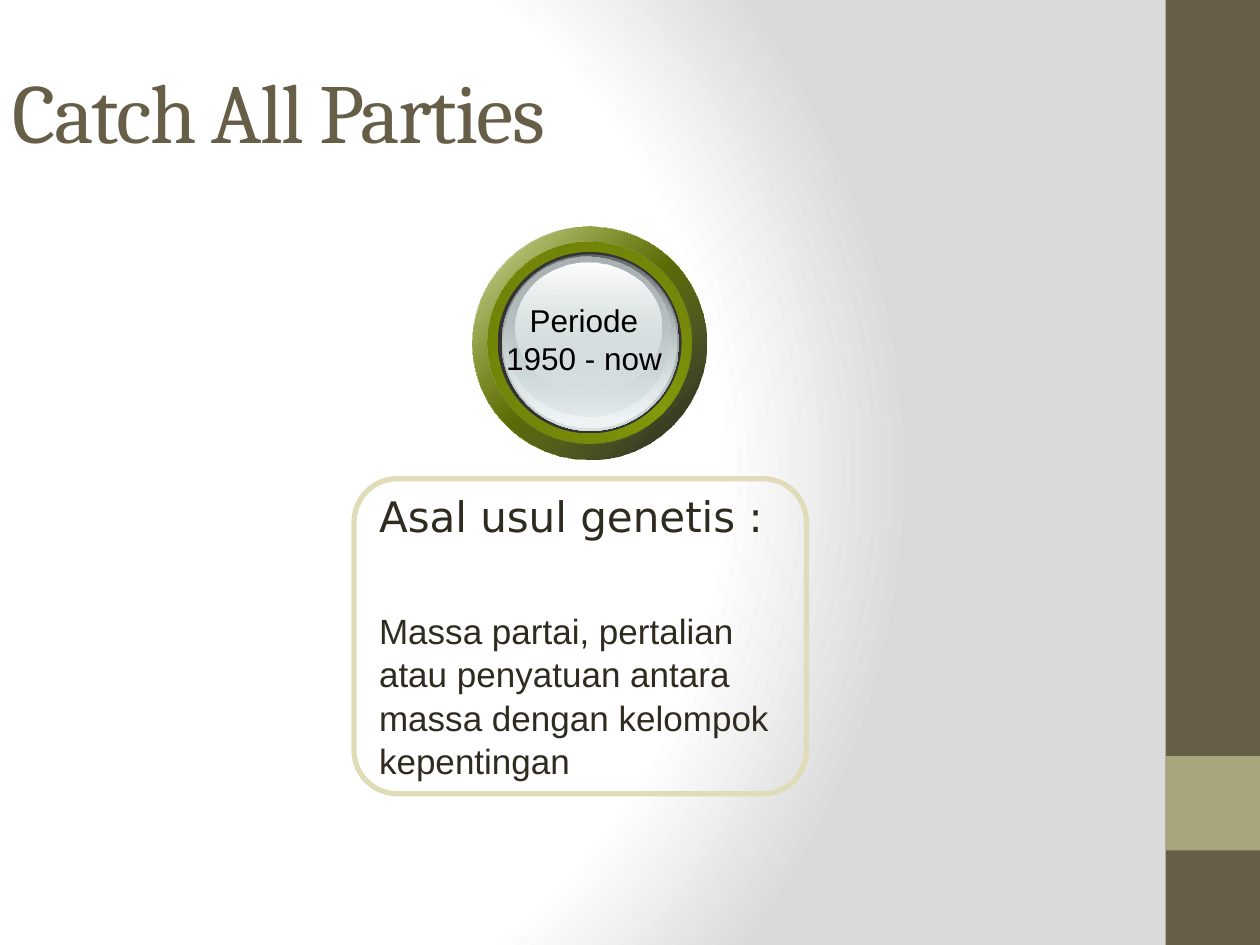
from lxml import etree
from pptx import Presentation
from pptx import util as u
from pptx.dml.color import RGBColor
from pptx.enum import shapes, text
from pptx.oxml.ns import qn

RINGS = [
    ((270, 129.6, 133.9, 133.2), 45, [(0, "FFFFFF"), (50, "849A0A"), (100, "FFFFFF")]),
    ((270, 129.6, 133.9, 133.2), 45, [(0, "849A0A", 32), (100, "000000", 90)]),
    ((278.6, 138.2, 116.6, 115.2), 315, [(0, "657608"), (50, "849A0A"), (100, "657608")]),
    ((278.6, 138.2, 116.6, 115.2), 45, [(0, "6C7E08"), (100, "849A0A", 0)]),
    ((284.4, 144, 105.1, 103.7), 0, [(0, "333333"), (100, "333333")]),
    ((286.6, 145.4, 101.5, 100.8), 90, [(0, "636869"), (100, "D6E1E2")]),
    ((287.3, 146.2, 99.4, 97.9), 90, [(0, "D6E1E2", 0), (100, "F1F5F5")]),
    ((288.7, 146.9, 94.3, 91.4), 90, [(0, "AAB2B3"), (100, "D6E1E2", 48)]),
    ((294.5, 149.8, 83.5, 74.2), 90, [(0, "FFFFFF"), (100, "D6E1E2", 38)]),
]


def color(value):
    """Turn a hex string into a colour."""
    return RGBColor.from_string(value)


def add_child(parent, tag, **attrs):
    """Append a DrawingML element with the given attributes."""
    return etree.SubElement(parent, qn(tag), {k: str(v) for k, v in attrs.items()})


def set_gradient(fill, parent, stops, angle=None, focus=None):
    """Fill with stops (position, colour, opacity), linear or circular."""
    fill.gradient()
    grad = parent.find(".//" + qn("a:gradFill"))
    for child in list(grad):
        grad.remove(child)
    stop_list = add_child(grad, "a:gsLst")
    for pos, value, *opacity in stops:
        stop = add_child(stop_list, "a:gs", pos=pos * 1000)
        clr = add_child(stop, "a:srgbClr", val=value)
        if opacity:
            add_child(clr, "a:alpha", val=opacity[0] * 1000)
    if focus:
        circle = add_child(grad, "a:path", path="circle")
        add_child(circle, "a:fillToRect", **{k: v * 1000 for k, v in zip("ltrb", focus)})
    else:
        add_child(grad, "a:lin", ang=angle * 60000, scaled=0)


def add_shape(s, kind, box, fill=None, line=None, width=0):
    """Add a preset shape without shadow."""
    sp = s.shapes.add_shape(kind, *(u.Pt(v) for v in box))
    sp.shadow.inherit = False
    if fill:
        sp.fill.solid()
        sp.fill.fore_color.rgb = color(fill)
    else:
        sp.fill.background()
    if line:
        sp.line.color.rgb = color(line)
        sp.line.width = u.Pt(width)
    else:
        sp.line.fill.background()
    return sp


def add_ring(s, box, angle, stops):
    """Add one gradient disc of the round badge."""
    sp = add_shape(s, shapes.MSO_SHAPE.OVAL, box)
    set_gradient(sp.fill, sp._element.spPr, stops, angle)


def write_text(tf, lines, anchor, wrap=True):
    """Write paragraphs given as text, font format and paragraph format."""
    tf.word_wrap = wrap
    tf.vertical_anchor = anchor
    for i, (words, font, para) in enumerate(lines):
        p = tf.paragraphs[0] if i == 0 else tf.add_paragraph()
        for name, value in para.items():
            setattr(p, name, value)
        r = p.add_run()
        r.text = words
        for name, value in font.items():
            if name == "color":
                r.font.color.rgb = color(value)
            else:
                setattr(r.font, name, value)
    return tf


def add_text(s, box, lines, anchor, wrap=True):
    """Add a text box."""
    sp = s.shapes.add_textbox(*(u.Pt(v) for v in box))
    return write_text(sp.text_frame, lines, anchor, wrap)


def main():
    """Build the slide."""
    prs = Presentation()
    prs.slide_width, prs.slide_height = u.Pt(720), u.Pt(540)
    s = prs.slides.add_slide(prs.slide_layouts[6])
    kinds, anchors, aligns = shapes.MSO_SHAPE, text.MSO_ANCHOR, text.PP_ALIGN
    set_gradient(s.background.fill, s._element,
                 [(0, "FFFFFF"), (75, "FFFFFF"), (100, "DADADA")], focus=(20, 50, 100, 50))
    add_shape(s, kinds.RECTANGLE, (666, 0, 54, 540), "675E47")
    add_shape(s, kinds.RECTANGLE, (666, 432, 54, 54), "A9A57C")

    card = add_shape(s, kinds.ROUNDED_RECTANGLE, (202.3, 273.6, 258.5, 180), line="DFDCB7", width=3)
    card.adjustments[0] = 0.137
    heading = {"name": "DejaVu Sans", "size": u.Pt(24), "color": "2F2B20"}
    body = {"name": "Arial", "size": u.Pt(20), "color": "2F2B20"}
    left = {"alignment": aligns.LEFT}
    write_text(card.text_frame, [
        ("Asal usul genetis :", heading, left),
        ("Massa partai, pertalian atau penyatuan antara massa dengan kelompok kepentingan",
         body, {**left, "space_before": u.Pt(38), "line_spacing": 1.04}),
    ], anchors.MIDDLE)

    title_font = {"name": "Cambria", "size": u.Pt(48), "color": "675E47"}
    title = add_text(s, (0, 18, 648, 90), [("Catch All Parties", title_font, left)], anchors.MIDDLE)
    title.paragraphs[0].runs[0].font._element.set("spc", "-100")

    for ring in RINGS:
        add_ring(s, *ring)
    label = {"name": "Arial", "size": u.Pt(18), "color": "000000"}
    centre = {"alignment": aligns.CENTER}
    add_text(s, (281.5, 168.5, 104.4, 51.1),
             [(words, label, centre) for words in ("Periode", "1950 - now")],
             anchors.TOP, wrap=False)
    prs.save("out.pptx")


if __name__ == "__main__":
    main()
